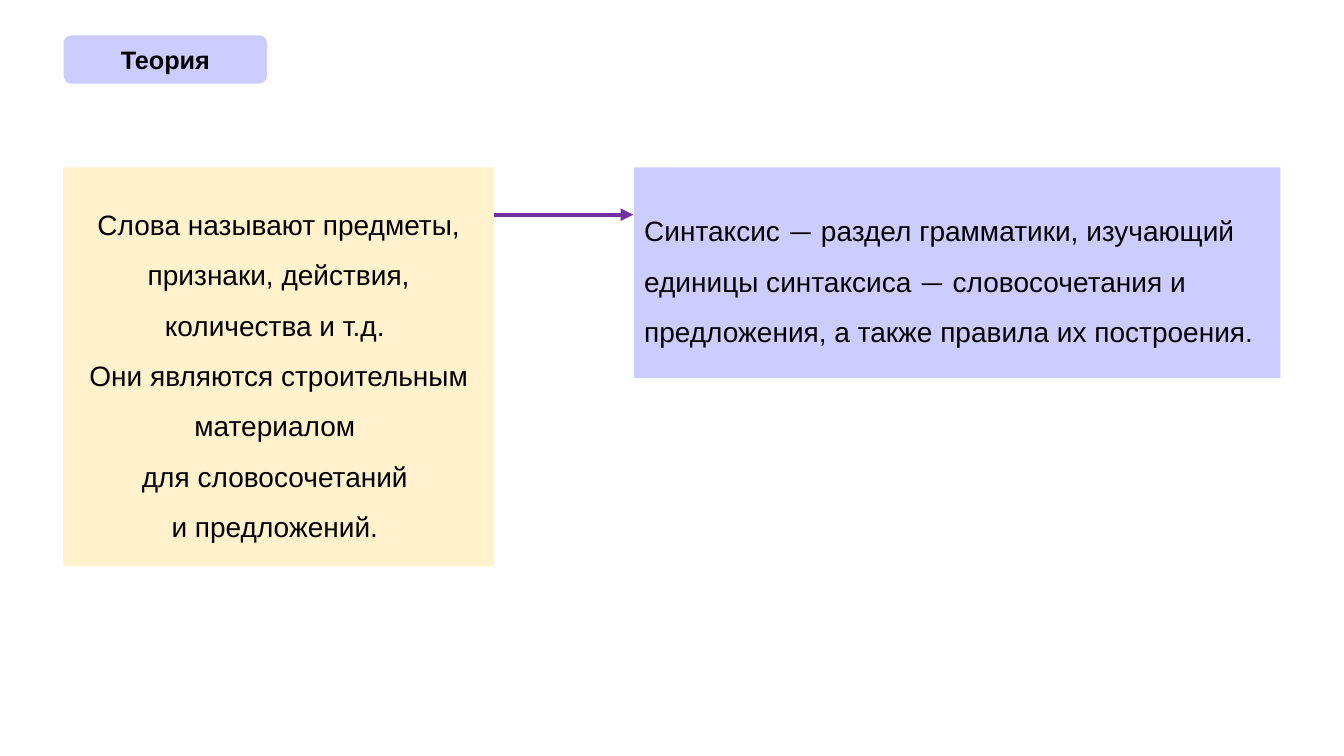
import pptx
import pptx.dml.color
import pptx.enum.shapes
import pptx.enum.text
import pptx.oxml
import pptx.oxml.ns
import pptx.util
from pptx.util import Inches

SHAPES = pptx.enum.shapes.MSO_SHAPE
ALIGN = pptx.enum.text.PP_ALIGN
LILAC = "CCCCFF"
CREAM = "FFF2CC"
PURPLE = "7030A0"


def color(value):
    """Return the RGB colour for a hex string."""
    return pptx.dml.color.RGBColor.from_string(value)


def write_text(frame, paragraphs, size=20, bold=False, align=ALIGN.CENTER, spacing=None):
    """Fill a text frame; each paragraph is a list of (text, font) runs."""
    frame.word_wrap = True
    frame.vertical_anchor = pptx.enum.text.MSO_ANCHOR.MIDDLE
    for index, runs in enumerate(paragraphs):
        paragraph = frame.add_paragraph() if index else frame.paragraphs[0]
        paragraph.alignment = align
        paragraph.line_spacing = spacing
        for text, font_name in runs:
            run = paragraph.add_run()
            run.text = text
            run.font.name = font_name
            run.font.size = pptx.util.Pt(size)
            run.font.bold = bold
            run.font.color.rgb = color("000000")


def add_panel(slide, preset, left, top, width, height, fill):
    """Add a flat filled shape without outline and return it."""
    panel = slide.shapes.add_shape(
        preset, Inches(left), Inches(top), Inches(width), Inches(height))
    panel.shadow.inherit = False
    panel.fill.solid()
    panel.fill.fore_color.rgb = color(fill)
    panel.line.fill.background()
    return panel


def add_arrow(slide, start, end, y):
    """Add a horizontal arrow pointing to its end."""
    arrow = slide.shapes.add_connector(
        pptx.enum.shapes.MSO_CONNECTOR.STRAIGHT,
        Inches(start), Inches(y), Inches(end), Inches(y))
    arrow.line.color.rgb = color(PURPLE)
    arrow.line.width = pptx.util.Pt(3)
    head = pptx.oxml.parse_xml(
        f'<a:tailEnd {pptx.oxml.ns.nsdecls("a")} type="triangle"/>')
    arrow.line._get_or_add_ln().append(head)
    effects = pptx.oxml.parse_xml(f'<a:effectLst {pptx.oxml.ns.nsdecls("a")}/>')
    arrow._element.spPr.append(effects)


def main():
    """Build the slide and save it."""
    presentation = pptx.Presentation()
    presentation.slide_width = Inches(13.33)
    presentation.slide_height = Inches(7.5)
    slide = presentation.slides.add_slide(presentation.slide_layouts[6])

    heading = add_panel(slide, SHAPES.ROUNDED_RECTANGLE, 0.63, 0.35, 2.02, 0.48, LILAC)
    write_text(heading.text_frame, [[("Теория", "Arial")]], size=18, bold=True)

    definition = add_panel(slide, SHAPES.RECTANGLE, 6.29, 1.66, 6.41, 2.09, LILAC)
    write_text(definition.text_frame, [[
        ("Синтаксис ", "Arial"),
        ("—", "Calibri"),
        (" раздел грамматики, изучающий единицы синтаксиса ", "Arial"),
        ("—", "Calibri"),
        (" словосочетания и предложения, а также правила их построения.", "Arial"),
    ]], align=ALIGN.LEFT, spacing=1.5)

    words = add_panel(slide, SHAPES.RECTANGLE, 0.63, 1.66, 4.27, 3.96, CREAM)
    sentences = [
        "Слова называют предметы, признаки, действия, количества и т.д. ",
        "Они являются строительным материалом ",
        "для словосочетаний ",
        "и предложений. ",
    ]
    write_text(words.text_frame, [[(text, "Arial")] for text in sentences], spacing=1.5)

    add_arrow(slide, 4.9, 6.28, 2.13)
    presentation.save("out.pptx")


if __name__ == "__main__":
    main()
